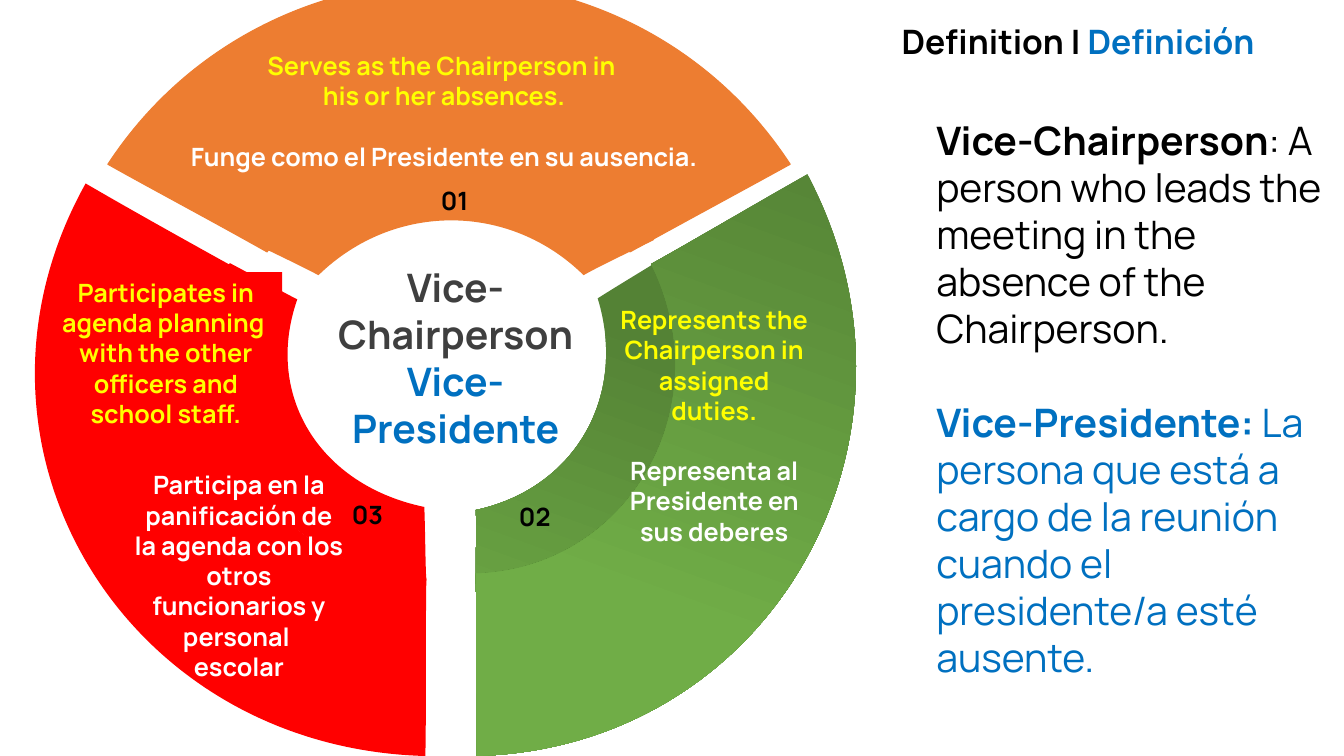
from pptx import Presentation
from pptx.dml.color import RGBColor
from pptx.enum.shapes import MSO_SHAPE
from pptx.enum.text import MSO_ANCHOR, MSO_AUTO_SIZE, PP_ALIGN
from pptx.oxml.ns import qn
from pptx.oxml.xmlchemy import OxmlElement
from pptx.util import Pt

PX = 9144  # EMU per px, 100 px to the inch
SLIDE_HEIGHT = 750
FONT = "Manrope"
LINE_HEIGHT = 1.2
COLORS = {
    "black": "000000", "gray": "3F3F3F", "blue": "0070C0",
    "yellow": "FFFF00", "white": "FFFFFF", "orange": "ED7D31", "red": "FF0000",
    "dark green": "548235", "mid green": "68A142", "light green": "70AD47",
}

# Title: box and (text, color) runs
TITLE_BOX = (866, 16, 407, 93)
TITLE_RUNS = [("Definition | ", "black"), ("Definición", "blue")]

# Wheel pieces: fill (one color or gradient stops), outline, start point,
# then cubic curves as two control points and an end point.
WHEEL = [
    ("orange", None, (316, 273),
     [(291, 260), (261, 246), (245, 238), (342, 117), (563, 115), (649, 238),
      (612, 256), (595, 264), (579, 273), (506, 201), (391, 200), (316, 273)]),
    ("orange", "orange", (265, 250),
     [(210, 219), (146, 185), (107, 163), (265, -78), (625, -80), (784, 163),
      (735, 190), (672, 224), (625, 250), (544, 126), (354, 123), (265, 250)]),
    ([(0.24, "dark green"), (1, "mid green")], None, (593, 296),
     [(615, 282), (642, 266), (656, 257), (719, 398), (621, 575), (472, 579),
      (472, 540), (473, 522), (472, 506), (570, 485), (623, 394), (593, 296)]),
    ([(0, "dark green"), (0.72, "light green")], None, (646, 262),
     [(701, 231), (762, 195), (801, 173), (939, 434), (766, 742), (473, 750),
      (472, 694), (473, 622), (472, 569), (622, 565), (717, 405), (646, 262)]),
    ("red", None, (421, 503),
     [(422, 529), (422, 559), (423, 576), (262, 562), (153, 391), (228, 261),
      (264, 280), (279, 289), (295, 297), (262, 391), (316, 481), (421, 503)]),
    ("red", None, (423, 573),
     [(422, 635), (423, 706), (422, 750), (122, 742), (-59, 440), (85, 182),
      (133, 210), (196, 245), (243, 271), (170, 403), (262, 564), (423, 573)]),
]

# Centred bold texts: box, size, fill, paragraphs of (text, color, gap before)
CENTRED_TEXTS = [
    ((314, 256, 276, 175), 28, None,
     [("Vice-", "gray", False), ("Chairperson", "gray", False),
      ("Vice-", "blue", False), ("Presidente", "blue", False)]),
    ((377, 179, 148, 45), 18, None, [("01", "black", False)]),
    ((463, 492, 135, 47), 18, None, [("02", "black", False)]),
    ((293, 490, 143, 46), 18, None, [("03", "black", False)]),
    ((157, 45, 567, 131), 18, None,
     [("Serves as the Chairperson in ", "yellow", False),
      ("his or her absences.", "yellow", False),
      ("Funge como el Presidente en su ausencia.", "white", True)]),
    ((599, 297, 219, 252), 18, None,
     [("Represents the Chairperson in assigned duties.", "yellow", False),
      ("Representa al Presidente en sus deberes", "white", True)]),
    ((49, 270, 231, 192), 18, "red",
     [("Participates in agenda planning ", "yellow", False),
      ("with the other officers and school staff.", "yellow", False)]),
    ((123, 461, 228, 222), 18, None,
     [("Participa en la panificación de la agenda con los otros funcionarios y personal ",
       "white", False), ("escolar", "white", False)]),
]

# Definitions: term, meaning, color
DEFINITION_BOX = (919, 110, 405, 598)
DEFINITIONS = [
    ("Vice-Chairperson",
     ": A person who leads the meeting in the absence of the Chairperson.", "black"),
    ("Vice-Presidente:",
     " La persona que está a cargo de la reunión cuando el presidente/a esté ausente.",
     "blue"),
]


def rgb(name):
    return RGBColor.from_string(COLORS[name])


def emu(lengths):
    return [length * PX for length in lengths]


def bend_lines(shape):
    """Turn each three line segments of an outline into one cubic curve."""
    lines = list(shape._element.iter(qn("a:lnTo")))
    for first in range(0, len(lines), 3):
        curve = OxmlElement("a:cubicBezTo")
        lines[first].addprevious(curve)
        for line in lines[first:first + 3]:
            curve.append(line[0])
            line.getparent().remove(line)


def add_wheel_piece(slide, fill, outline, start, points):
    builder = slide.shapes.build_freeform(*start, scale=PX)
    builder.add_line_segments(points, close=True)
    shape = builder.convert_to_shape()
    bend_lines(shape)
    shape.shadow.inherit = False
    if isinstance(fill, str):
        shape.fill.solid()
        shape.fill.fore_color.rgb = rgb(fill)
    else:
        shape.fill.gradient()
        shape.fill.gradient_angle = 250
        for stop, (position, color) in zip(shape.fill.gradient_stops, fill):
            stop.position = position
            stop.color.rgb = rgb(color)
    if outline:
        shape.line.color.rgb = rgb(outline)
        shape.line.width = Pt(0.75)
    else:
        shape.line.fill.background()


def prepare_frame(shape):
    frame = shape.text_frame
    frame.word_wrap = True
    frame.auto_size = MSO_AUTO_SIZE.NONE
    frame.vertical_anchor = MSO_ANCHOR.TOP
    return frame


def format_paragraph(paragraph, size, alignment, gap=False):
    paragraph.alignment = alignment
    paragraph.font.name = FONT
    paragraph.font.size = Pt(size)
    if gap:
        paragraph.space_before = Pt(size * LINE_HEIGHT)


def next_paragraph(frame, index):
    return frame.add_paragraph() if index else frame.paragraphs[0]


def add_centred_text(slide, box, size, fill, paragraphs):
    if fill:
        shape = slide.shapes.add_shape(MSO_SHAPE.RECTANGLE, *emu(box))
        shape.shadow.inherit = False
        shape.fill.solid()
        shape.fill.fore_color.rgb = rgb(fill)
        shape.line.fill.background()
    else:
        shape = slide.shapes.add_textbox(*emu(box))
    frame = prepare_frame(shape)
    for index, (text, color, gap) in enumerate(paragraphs):
        paragraph = next_paragraph(frame, index)
        paragraph.text = text
        format_paragraph(paragraph, size, PP_ALIGN.CENTER, gap)
        paragraph.font.bold = True
        paragraph.font.color.rgb = rgb(color)


def add_definitions(slide):
    frame = prepare_frame(slide.shapes.add_textbox(*emu(DEFINITION_BOX)))
    for index, (term, meaning, color) in enumerate(DEFINITIONS):
        paragraph = next_paragraph(frame, index)
        format_paragraph(paragraph, 28, PP_ALIGN.LEFT, gap=index > 0)
        paragraph.font.color.rgb = rgb(color)
        for text, bold in ((term, True), (meaning, False)):
            run = paragraph.add_run()
            run.text = text
            run.font.bold = bold


def format_title(title):
    title.left, title.top, title.width, title.height = emu(TITLE_BOX)
    paragraph = prepare_frame(title).paragraphs[0]
    format_paragraph(paragraph, 24, PP_ALIGN.CENTER)
    paragraph.font.bold = True
    for text, color in TITLE_RUNS:
        run = paragraph.add_run()
        run.text = text
        run.font.color.rgb = rgb(color)


def main():
    presentation = Presentation()
    presentation.slide_height = SLIDE_HEIGHT * PX
    presentation.slide_width = presentation.slide_height * 16 // 9
    slide = presentation.slides.add_slide(presentation.slide_layouts[5])
    format_title(slide.shapes.title)
    for piece in WHEEL:
        add_wheel_piece(slide, *piece)
    for text in CENTRED_TEXTS:
        add_centred_text(slide, *text)
    add_definitions(slide)
    presentation.save("out.pptx")


if __name__ == "__main__":
    main()
